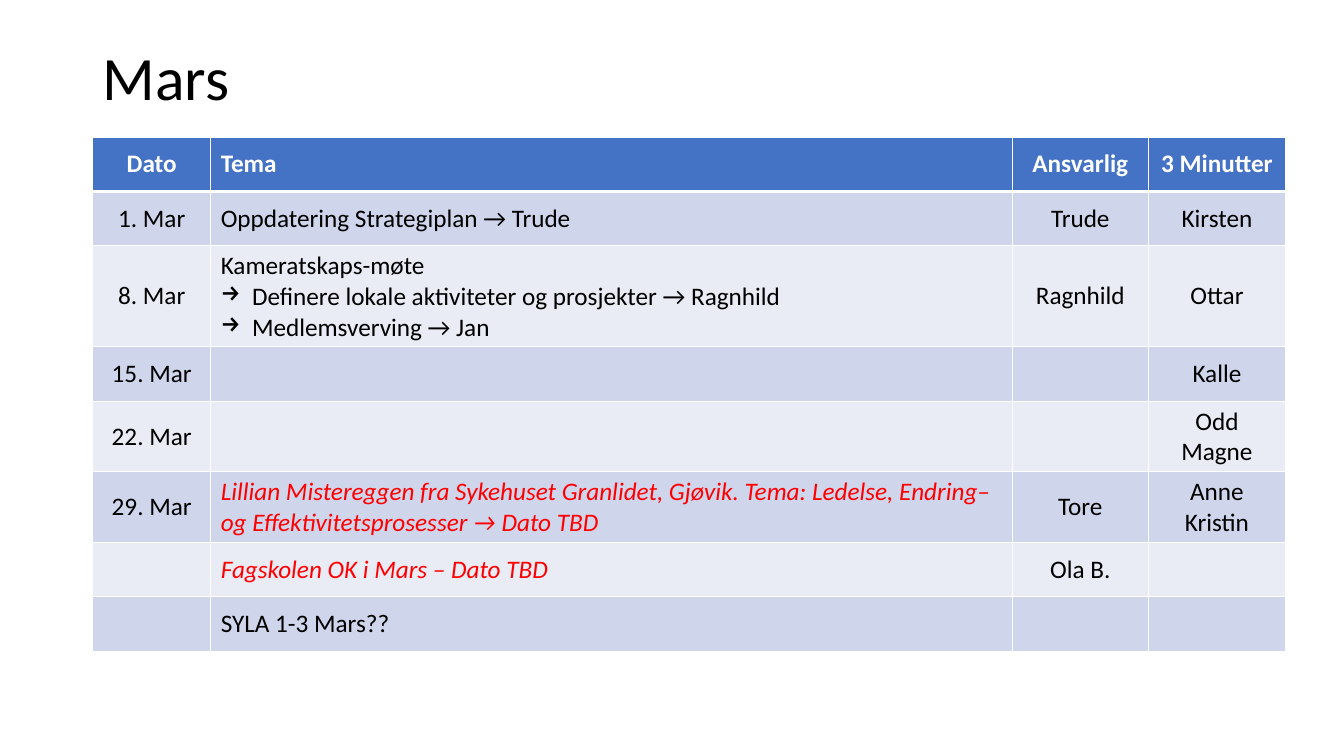
from dataclasses import dataclass

from lxml.etree import SubElement
from pptx import Presentation
from pptx.dml.color import RGBColor
from pptx.enum.text import MSO_ANCHOR, PP_ALIGN
from pptx.oxml.ns import qn
from pptx.table import _Cell
from pptx.text.text import _Paragraph
from pptx.util import Inches, Pt

FONT = "Calibri"
BLACK, WHITE, RED = "000000", "FFFFFF", "FF0000"
HEADER_FILL = "4472C4"
BAND_FILLS = ("E9EBF5", "CFD5EA")
COLUMN_WIDTHS = (1.17, 7.95, 1.35, 1.36)
ROW_HEIGHT = 0.54
TOPIC_COLUMN = 1


@dataclass(frozen=True)
class Meeting:
    date: str = ""
    topic: str = ""
    responsible: str = ""
    three_minutes: str = ""
    points: tuple[str, ...] = ()
    tentative: bool = False


HEADINGS = Meeting("Dato", "Tema", "Ansvarlig", "3 Minutter")
MEETINGS = (
    Meeting("1. Mar", "Oppdatering Strategiplan → Trude", "Trude", "Kirsten"),
    Meeting("8. Mar", "Kameratskaps-møte", "Ragnhild", "Ottar",
            points=("Definere lokale aktiviteter og prosjekter → Ragnhild",
                    "Medlemsverving → Jan")),
    Meeting("15. Mar", three_minutes="Kalle"),
    Meeting("22. Mar", three_minutes="Odd Magne"),
    Meeting("29. Mar",
            "Lillian Mistereggen fra Sykehuset Granlidet, Gjøvik. Tema: Ledelse, "
            "Endring– og Effektivitetsprosesser → Dato TBD",
            "Tore", "Anne Kristin", tentative=True),
    Meeting(topic="Fagskolen OK i Mars – Dato TBD", responsible="Ola B.", tentative=True),
    Meeting(topic="SYLA 1-3 Mars??"),
)


def rgb(color: str) -> RGBColor:
    return RGBColor.from_string(color)


def style_text(paragraph: _Paragraph, size: float, color: str,
               bold: bool = False, italic: bool = False) -> None:
    for run in paragraph.runs:
        font = run.font
        font.name, font.size, font.bold, font.italic = FONT, Pt(size), bold, italic
        font.color.rgb = rgb(color)


def add_arrow_bullet(paragraph: _Paragraph) -> None:
    properties = paragraph._p.get_or_add_pPr()
    properties.set("marL", str(Inches(0.31)))
    properties.set("indent", str(-Inches(0.31)))
    SubElement(properties, qn("a:buChar")).set("char", "→")


def add_borders(cell: _Cell, top: float, bottom: float) -> None:
    """Draw white borders; call before filling, as the XML order requires."""
    properties = cell._tc.get_or_add_tcPr()
    for side, width in (("L", 1), ("R", 1), ("T", top), ("B", bottom)):
        line = SubElement(properties, qn(f"a:ln{side}"))
        line.set("w", str(Pt(width)))
        fill = SubElement(line, qn("a:solidFill"))
        SubElement(fill, qn("a:srgbClr")).set("val", WHITE)


def fill_row(cells: list[_Cell], meeting: Meeting, row: int) -> None:
    is_header = row == 0
    topic = "\n".join((meeting.topic, *meeting.points))
    texts = (meeting.date, topic, meeting.responsible, meeting.three_minutes)
    for column, (cell, text) in enumerate(zip(cells, texts)):
        is_topic = column == TOPIC_COLUMN
        tentative = is_topic and meeting.tentative
        color = WHITE if is_header else RED if tentative else BLACK
        add_borders(cell, top=3 if row == 1 else 1, bottom=3 if is_header else 1)
        cell.fill.solid()
        cell.fill.fore_color.rgb = rgb(HEADER_FILL if is_header else BAND_FILLS[row % 2])
        cell.vertical_anchor = MSO_ANCHOR.MIDDLE
        cell.text_frame.text = text
        for index, paragraph in enumerate(cell.text_frame.paragraphs):
            paragraph.alignment = PP_ALIGN.LEFT if is_topic else PP_ALIGN.CENTER
            if index > 0:
                add_arrow_bullet(paragraph)
            style_text(paragraph, 18, color, bold=is_header, italic=tentative)


def main() -> None:
    presentation = Presentation()
    presentation.slide_width, presentation.slide_height = Inches(13.33), Inches(7.5)
    slide = presentation.slides.add_slide(presentation.slide_layouts[6])

    month = slide.shapes.add_textbox(
        Inches(0.92), Inches(0.4), Inches(11.5), Inches(0.79)).text_frame
    month.word_wrap = True
    month.vertical_anchor = MSO_ANCHOR.MIDDLE
    month.text = "Mars"
    month.paragraphs[0].line_spacing = 0.9
    style_text(month.paragraphs[0], 44, BLACK)

    rows = (HEADINGS, *MEETINGS)
    schedule = slide.shapes.add_table(
        len(rows), len(COLUMN_WIDTHS), Inches(0.92), Inches(1.36),
        Inches(sum(COLUMN_WIDTHS)), Inches(ROW_HEIGHT * len(rows))).table
    for column, width in zip(schedule.columns, COLUMN_WIDTHS):
        column.width = Inches(width)
    for index, meeting in enumerate(rows):
        schedule.rows[index].height = Inches(ROW_HEIGHT)
        fill_row(list(schedule.rows[index].cells), meeting, index)

    presentation.save("out.pptx")


if __name__ == "__main__":
    main()
